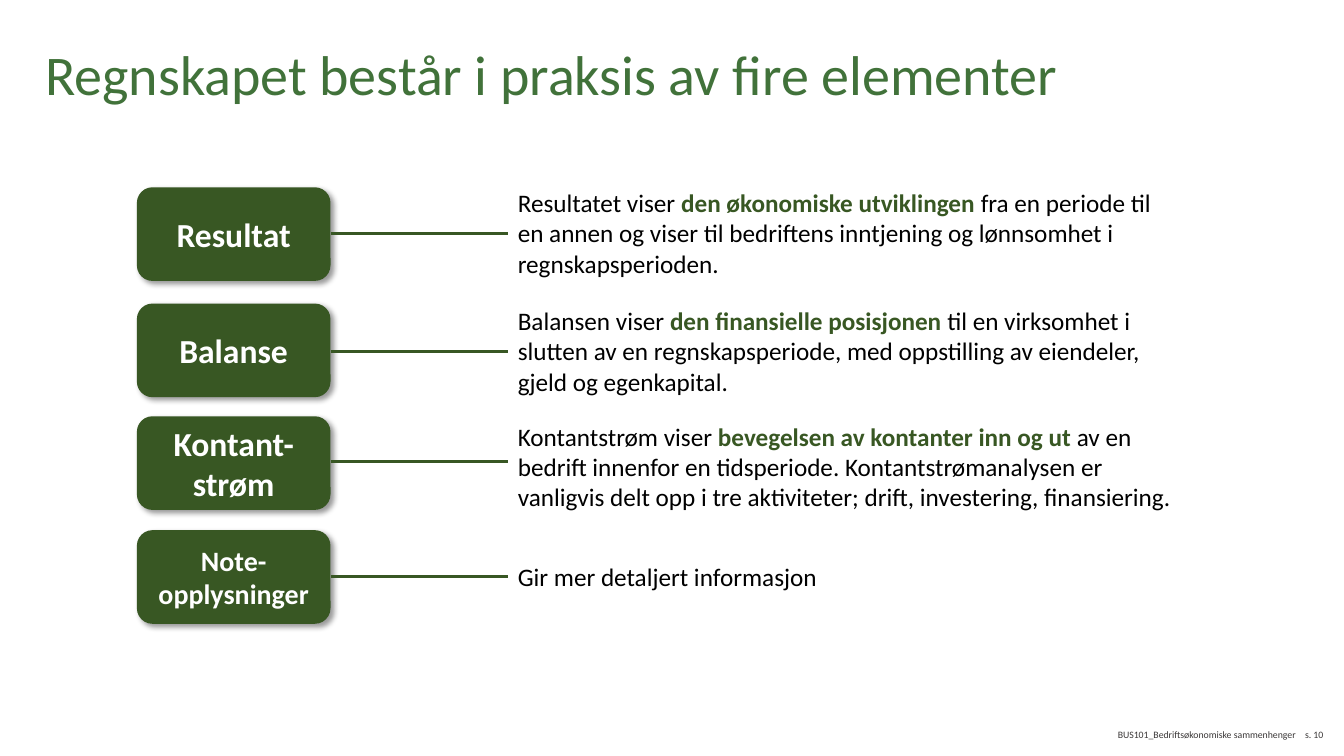
from lxml import etree
from pptx import Presentation
from pptx import util as u
from pptx.dml.color import RGBColor
from pptx.enum import shapes, text
from pptx.oxml.ns import qn

HUES = {"title": "41723A", "green": "385723", "body": "000000",
        "white": "FFFFFF", "foot": "3B3838"}

# label, label size, box top, line height, text top, text width, text height, parts
ROWS = [
    ("Resultat", 24, 4.72, 5.89, 4.6, 16.94, 2.57,
     ["Resultatet viser ", "den økonomiske utviklingen ",
      "fra en periode til en annen og viser til bedriftens inntjening "
      "og lønnsomhet i regnskapsperioden."]),
    ("Balanse", 24, 7.65, 8.86, 7.57, 16.94, 2.57,
     ["Balansen viser ", "den finansielle posisjonen ",
      "til en virksomhet i slutten av en regnskapsperiode, "
      "med oppstilling av eiendeler, gjeld og egenkapital."]),
    ("Kontant-strøm", 24, 10.49, 11.63, 10.49, 17.12, 3.33,
     ["Kontantstrøm viser ", "bevegelsen av kontanter inn og ut ",
      "av en bedrift innenfor en tidsperiode. Kontantstrømanalysen er vanligvis "
      "delt opp i tre aktiviteter; drift, investering, finansiering."]),
    ("Note-opplysninger", 20, 13.36, 14.53, 14.02, 16.94, 1.02,
     ["Gir mer detaljert informasjon"]),
]
BOX_LEFT, BOX_WIDTH, BOX_HIGH = 3.45, 4.88, 2.36
TEXT_LEFT = 12.8


class Page:
    """Holds the slide and the style of its elements."""
    font = "Calibri"

    def __init__(self, slide):
        self.slide = slide

    def style(self, run, size, hue, bold=False):
        run.font.name = self.font
        run.font.size = u.Pt(size)
        run.font.bold = bold
        run.font.color.rgb = RGBColor.from_string(HUES[hue])

    def title(self, words, left, top, width, height):
        shape = self.slide.shapes.title
        shape.left, shape.top = u.Cm(left), u.Cm(top)
        shape.width, shape.height = u.Cm(width), u.Cm(height)
        frame = shape.text_frame
        frame.text = words
        frame.vertical_anchor = text.MSO_ANCHOR.MIDDLE
        para = frame.paragraphs[0]
        para.alignment = text.PP_ALIGN.LEFT
        para.line_spacing = 0.9
        self.style(para.runs[0], 40, "title")

    def prose(self, parts, left, top, width, height):
        """Add body text whose second part is stressed."""
        frame = self.frame(left, top, width, height)
        for spot, part in enumerate(parts):
            run = frame.paragraphs[0].add_run()
            run.text = part
            key = spot == 1
            self.style(run, 18, "green" if key else "body", key)

    def frame(self, left, top, width, height):
        box = self.slide.shapes.add_textbox(
            u.Cm(left), u.Cm(top), u.Cm(width), u.Cm(height))
        box.text_frame.word_wrap = True
        return box.text_frame

    def foot(self, words, left, width, align):
        frame = self.frame(left, 18.19, width, 0.65)
        self.inset(frame, 0)
        frame.text = words
        frame.paragraphs[0].alignment = align
        self.style(frame.paragraphs[0].runs[0], 7, "foot")

    def inset(self, frame, side):
        frame.margin_left = frame.margin_right = u.Cm(side)
        frame.margin_top = frame.margin_bottom = 0
        frame.vertical_anchor = text.MSO_ANCHOR.MIDDLE

    def label(self, words, size, top):
        box = self.slide.shapes.add_shape(
            shapes.MSO_SHAPE.ROUNDED_RECTANGLE, u.Cm(BOX_LEFT), u.Cm(top),
            u.Cm(BOX_WIDTH), u.Cm(BOX_HIGH))
        box.fill.solid()
        box.fill.fore_color.rgb = RGBColor.from_string(HUES["green"])
        box.line.fill.background()
        self.shade(box)
        frame = box.text_frame
        frame.word_wrap = True
        self.inset(frame, 0.2)
        frame.text = words
        frame.paragraphs[0].alignment = text.PP_ALIGN.CENTER
        self.style(frame.paragraphs[0].runs[0], size, "white", True)

    def shade(self, box):
        """Give the box a soft shadow, down and to the right."""
        box.shadow.inherit = False
        effects = box.element.spPr.find(qn("a:effectLst"))
        outer = etree.SubElement(
            effects, qn("a:outerShdw"), blurRad=str(u.Pt(4)), dist=str(u.Pt(3)),
            dir=str(45 * 60000), algn="tl", rotWithShape="0")
        hue = etree.SubElement(outer, qn("a:srgbClr"), val=HUES["body"])
        etree.SubElement(hue, qn("a:alpha"), val="40000")

    def link(self, y):
        line = self.slide.shapes.add_connector(
            shapes.MSO_CONNECTOR.STRAIGHT, u.Cm(BOX_LEFT + BOX_WIDTH), u.Cm(y),
            u.Cm(TEXT_LEFT), u.Cm(y))
        line.line.color.rgb = RGBColor.from_string(HUES["green"])
        line.line.width = u.Pt(2.25)
        etree.SubElement(line.element.spPr, qn("a:effectLst"))


def main():
    deck = Presentation()
    deck.slide_width, deck.slide_height = u.Cm(33.87), u.Cm(19.05)
    page = Page(deck.slides.add_slide(deck.slide_layouts[5]))
    page.title("Regnskapet består i praksis av fire elementer",
               0.89, 1.04, 26.75, 1.8)
    for label, size, top, y, text_top, width, height, parts in ROWS:
        page.label(label, size, top)
        page.link(y)
        page.prose(parts, TEXT_LEFT, text_top, width, height)
    page.foot("BUS101_Bedriftsøkonomiske sammenhenger", 28.17, 5.44,
              text.PP_ALIGN.LEFT)
    page.foot("s. 10", 32.69, 0.66, text.PP_ALIGN.RIGHT)
    deck.save("out.pptx")


if __name__ == "__main__":
    main()
